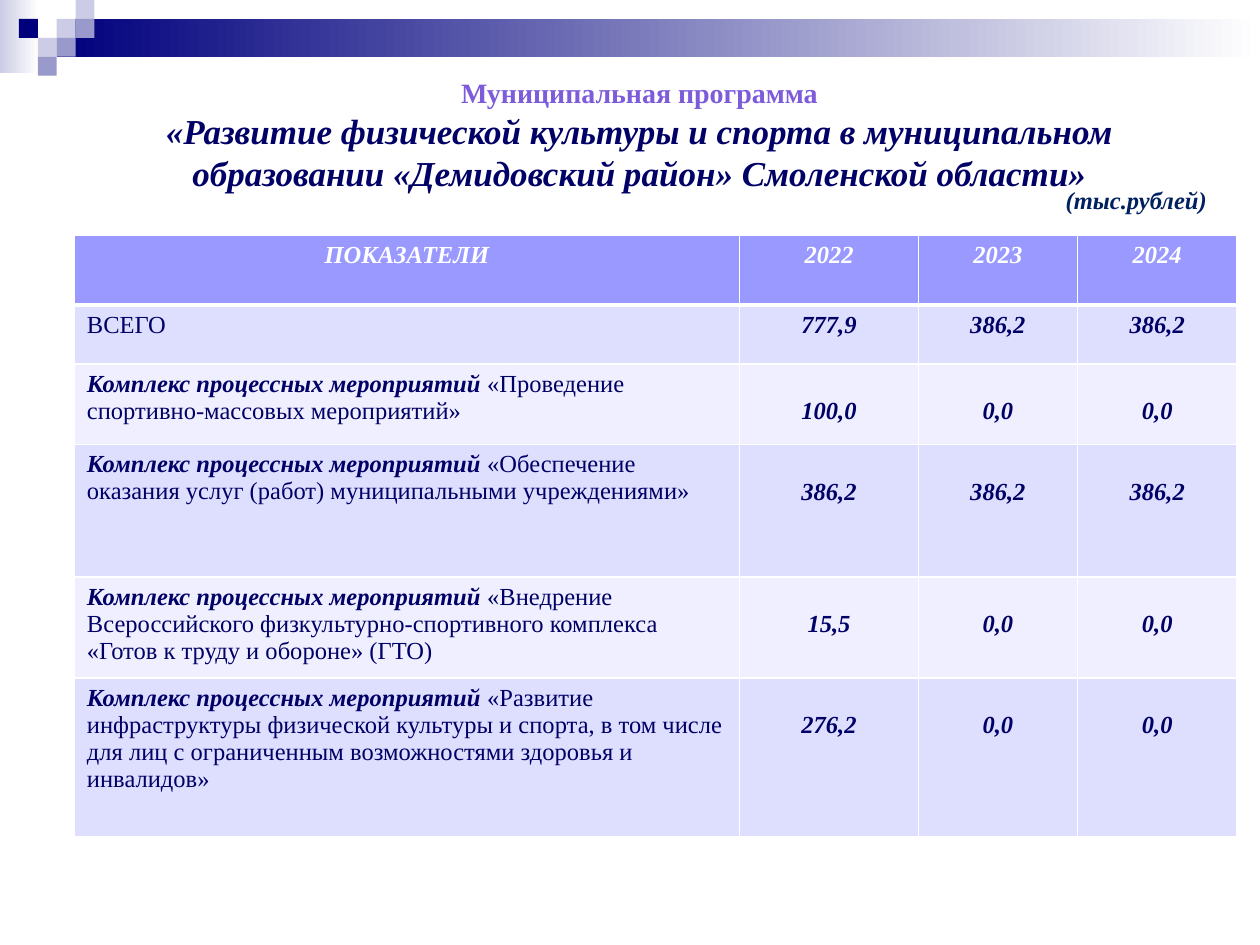
from collections import namedtuple
from dataclasses import dataclass

from lxml.etree import SubElement
from pptx import Presentation
from pptx.dml.color import RGBColor as RGB
from pptx.enum.shapes import MSO_SHAPE as Shape
from pptx.enum.text import MSO_AUTO_SIZE as AutoSize, PP_ALIGN as Align
from pptx.oxml.ns import qn
from pptx.util import Inches, Pt

Box = namedtuple("Box", "left top width height")


@dataclass(frozen=True)
class Theme:
    font: str = "Times New Roman"
    white: str = "FFFFFF"
    navy: str = "00007D"
    mid: str = "9999CC"
    pale: str = "CCCCE6"
    violet: str = "7D5CDA"
    ink: str = "000066"
    unit_ink: str = "002060"
    header: str = "9999FF"
    bands: tuple = ("DEDEFF", "EFEFFF")
    body_size: int = 14
    program_size: int = 16
    title_size: int = 20


THEME = Theme()
ACTIVITY = "Комплекс процессных мероприятий "
HEADER = ("ПОКАЗАТЕЛИ", "2022", "2023", "2024")
# Each row: bold lead, plain name, yearly values
ROWS = [
    ("", "ВСЕГО", ("777,9", "386,2", "386,2")),
    (ACTIVITY, "«Проведение спортивно-массовых мероприятий»",
     ("100,0", "0,0", "0,0")),
    (ACTIVITY, "«Обеспечение оказания услуг (работ) муниципальными учреждениями»",
     ("386,2", "386,2", "386,2")),
    (ACTIVITY, "«Внедрение Всероссийского физкультурно-спортивного комплекса "
     "«Готов к труду и обороне» (ГТО)", ("15,5", "0,0", "0,0")),
    (ACTIVITY, "«Развитие инфраструктуры физической культуры и спорта, в том числе "
     "для лиц с ограниченным возможностями здоровья и инвалидов»",
     ("276,2", "0,0", "0,0")),
]
COLUMN_WIDTHS = (5.28, 1.42, 1.26, 1.27)
ROW_HEIGHTS = (0.55, 0.47, 0.64, 1.05, 0.8, 1.26)


def style(para, size, color, bold=True, italic=True, align=Align.CENTER):
    para.alignment = align
    font = para.font
    font.name, font.size = THEME.font, Pt(size)
    font.bold, font.italic = bold, italic
    font.color.rgb = RGB.from_string(color)


def add_block(page, box, start, end=None):
    """Plain rectangle, or a left-to-right gradient when end is given."""
    block = page.shapes.add_shape(Shape.RECTANGLE, *map(Inches, box))
    block.shadow.inherit = False
    block.line.fill.background()
    if end:
        block.fill.gradient()
        block.fill.gradient_angle = 0
        for stop, color in zip(block.fill.gradient_stops, (start, end)):
            stop.color.rgb = RGB.from_string(color)
    else:
        block.fill.solid()
        block.fill.fore_color.rgb = RGB.from_string(start)


def add_banner(page, box):
    unit = box.height / 4
    left, top = box.left, box.top
    add_block(page, Box(left, top, 0.31, 0.58), THEME.pale, THEME.white)
    add_block(page, Box(left + 3 * unit, top + unit, box.width - 3 * unit, 2 * unit),
              THEME.navy, THEME.white)
    squares = [(3, 1, THEME.pale), (4, 0, THEME.pale), (4, 1, THEME.mid),
               (2, 2, THEME.pale), (1, 1, THEME.navy), (3, 2, THEME.mid),
               (2, 3, THEME.mid)]
    for column, row, color in squares:
        add_block(page, Box(left + column * unit, top + row * unit, unit, unit), color)


def add_text_frame(page, box, wrap):
    frame = page.shapes.add_textbox(*map(Inches, box)).text_frame
    frame.word_wrap = wrap
    frame.auto_size = AutoSize.SHAPE_TO_FIT_TEXT
    return frame


def add_heading(page, box):
    frame = add_text_frame(page, box, True)
    program = frame.paragraphs[0]
    program.text = "Муниципальная программа"
    style(program, THEME.program_size, THEME.violet, italic=False)
    title = frame.add_paragraph()
    title.text = ("«Развитие физической культуры и спорта в муниципальном "
                  "образовании «Демидовский район» Смоленской области»")
    style(title, THEME.title_size, THEME.ink)


def add_unit_note(page, box):
    para = add_text_frame(page, box, False).paragraphs[0]
    para.text = "(тыс.рублей)"
    style(para, THEME.body_size, THEME.unit_ink, align=Align.LEFT)


def paint_cell(cell, color, bottom=1):
    properties = cell._tc.get_or_add_tcPr()
    for side, width in (("L", 1), ("R", 1), ("T", 1), ("B", bottom)):
        line = SubElement(properties, qn(f"a:ln{side}"), w=str(Pt(width)))
        fill = SubElement(line, qn("a:solidFill"))
        SubElement(fill, qn("a:srgbClr"), val=THEME.white)
    cell.fill.solid()
    cell.fill.fore_color.rgb = RGB.from_string(color)


def add_budget_table(page, box):
    table = page.shapes.add_table(len(ROW_HEIGHTS), len(COLUMN_WIDTHS),
                                  *map(Inches, box)).table
    for column, width in zip(table.columns, COLUMN_WIDTHS):
        column.width = Inches(width)
    for row, height in zip(table.rows, ROW_HEIGHTS):
        row.height = Inches(height)

    # Header
    for cell, label in zip(table.rows[0].cells, HEADER):
        paint_cell(cell, THEME.header, bottom=3)
        para = cell.text_frame.paragraphs[0]
        para.text = label
        style(para, THEME.body_size, THEME.white)

    # Body
    for index, (lead, name, values) in enumerate(ROWS):
        name_cell, *value_cells = table.rows[index + 1].cells
        color = THEME.bands[index % 2]
        paint_cell(name_cell, color)
        para = name_cell.text_frame.paragraphs[0]
        style(para, THEME.body_size, THEME.ink, False, False, Align.LEFT)
        if lead:
            span = para.add_run()
            span.text = lead
            span.font.bold = span.font.italic = True
        para.add_run().text = name
        for cell, value in zip(value_cells, values):
            paint_cell(cell, color)
            if lead:  # values sit level with the second line of the name
                cell.margin_top = Inches(0.27)
            para = cell.text_frame.paragraphs[0]
            para.text = value
            style(para, THEME.body_size, THEME.ink)


def main():
    deck = Presentation()
    deck.slide_width, deck.slide_height = Inches(10), Inches(7.5)
    page = deck.slides.add_slide(deck.slide_layouts[6])
    add_banner(page, Box(0, 0, 10, 0.6))
    add_heading(page, Box(0.78, 0.55, 8.59, 1.04))
    add_budget_table(page, Box(0.59, 1.87, sum(COLUMN_WIDTHS), sum(ROW_HEIGHTS)))
    add_unit_note(page, Box(8.36, 1.42, 1.33, 0.34))
    deck.save("out.pptx")


if __name__ == "__main__":
    main()
